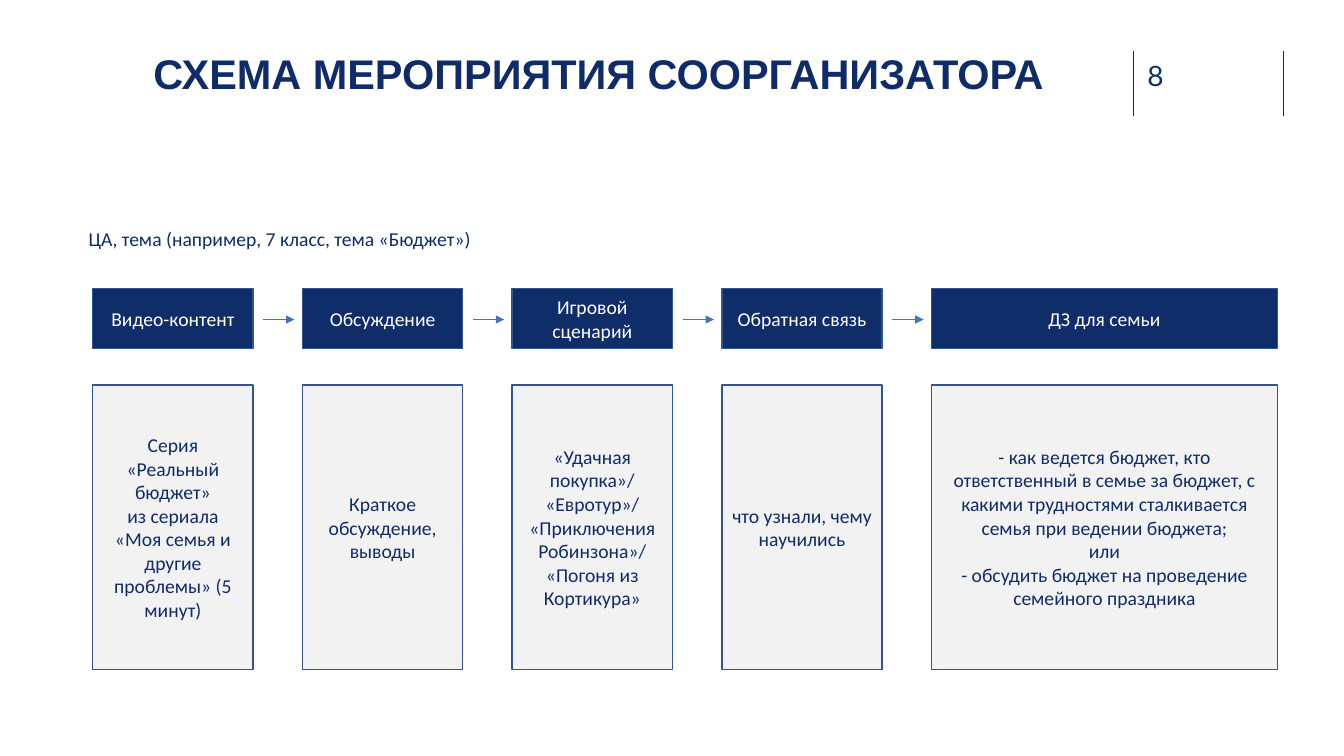
from lxml import etree
from pptx import Presentation
from pptx.dml.color import RGBColor
from pptx.enum.shapes import MSO_CONNECTOR, MSO_SHAPE
from pptx.enum.text import MSO_ANCHOR, MSO_AUTO_SIZE, PP_ALIGN
from pptx.oxml.ns import qn
from pptx.util import Emu, Pt

EMU_PER_PX = 9144

NAVY = RGBColor(0x0E, 0x2D, 0x69)
INK = RGBColor(0x0F, 0x2C, 0x68)
BORDER = RGBColor(0x32, 0x54, 0x91)
ARROW = RGBColor(0x44, 0x72, 0xC4)
PALE = RGBColor(0xF2, 0xF2, 0xF2)
WHITE = RGBColor(0xFF, 0xFF, 0xFF)

CARD_LEFT, CARD_WIDTH, LAST_CARD_WIDTH, CARD_STEP = 92, 159, 343, 208
HEADER_TOP, HEADER_HEIGHT = 286, 60
BODY_TOP, BODY_HEIGHT = 382, 282
ARROW_GAP, ARROW_LENGTH, ARROW_TOP = 10, 31, 317

STAGES = [
    ("Видео-контент",
     ["Серия «Реальный бюджет»",
      "из сериала «Моя семья и другие проблемы» (5 минут)"]),
    ("Обсуждение", ["Краткое обсуждение, выводы"]),
    ("Игровой сценарий",
     ["«Удачная покупка»/ «Евротур»/ «Приключения Робинзона»/ «Погоня из Кортикура»"]),
    ("Обратная связь", ["что узнали, чему научились"]),
    ("ДЗ для семьи",
     ["- как ведется бюджет, кто ответственный в семье за бюджет, "
      "с какими трудностями сталкивается семья при ведении бюджета;",
      "или",
      "- обсудить бюджет на проведение семейного праздника"]),
]


def px(*lengths):
    return [Emu(length * EMU_PER_PX) for length in lengths]


def write(shape, lines, size=14, font="Calibri", color=INK, bold=False,
          align=PP_ALIGN.LEFT, anchor=MSO_ANCHOR.TOP, spacing=None, inset=None):
    frame = shape.text_frame
    frame.word_wrap = True
    frame.auto_size = MSO_AUTO_SIZE.NONE
    frame.vertical_anchor = anchor
    if inset is not None:
        frame.margin_left = frame.margin_right = inset
        frame.margin_top = frame.margin_bottom = inset
    frame.text = "\n".join(lines)
    for paragraph in frame.paragraphs:
        paragraph.alignment = align
        paragraph.line_spacing = spacing
        paragraph.font.size = Pt(size)
        paragraph.font.name = font
        paragraph.font.bold = bold
        paragraph.font.color.rgb = color


def add_text(slide, box, lines, **text_format):
    write(slide.shapes.add_textbox(*px(*box)), lines, **text_format)


def add_card(slide, box, lines, fill, color):
    card = slide.shapes.add_shape(MSO_SHAPE.RECTANGLE, *px(*box))
    card.shadow.inherit = False
    card.fill.solid()
    card.fill.fore_color.rgb = fill
    card.line.color.rgb = BORDER
    card.line.width = Pt(1)
    write(card, lines, color=color, align=PP_ALIGN.CENTER, anchor=MSO_ANCHOR.MIDDLE)


def add_line(slide, start, end, color, width, arrow=False):
    line = slide.shapes.add_connector(MSO_CONNECTOR.STRAIGHT, *px(*start, *end))
    line.line.color.rgb = color
    line.line.width = Pt(width)
    if arrow:
        etree.SubElement(line.line._get_or_add_ln(), qn("a:tailEnd"), type="triangle")
    etree.SubElement(line._element.spPr, qn("a:effectLst"))


def add_heading(slide):
    title = slide.shapes.title
    title.left, title.top, title.width, title.height = px(142, 48, 968, 85)
    write(title, ["СХЕМА МЕРОПРИЯТИЯ СООРГАНИЗАТОРА"],
          size=29.6, font="Arial", bold=True, spacing=0.9)
    for x in (1124, 1273):
        add_line(slide, (x, 51), (x, 115), NAVY, 1)
    add_text(slide, (1138, 58, 73, 34), ["8"], size=20, font="Lato", color=NAVY, inset=0)


def add_stages(slide):
    last = len(STAGES) - 1
    for index, (name, details) in enumerate(STAGES):
        left = CARD_LEFT + index * CARD_STEP
        width = LAST_CARD_WIDTH if index == last else CARD_WIDTH
        add_card(slide, (left, HEADER_TOP, width, HEADER_HEIGHT), [name], NAVY, WHITE)
        add_card(slide, (left, BODY_TOP, width, BODY_HEIGHT), details, PALE, INK)
        if index < last:
            start = left + width + ARROW_GAP
            add_line(slide, (start, ARROW_TOP), (start + ARROW_LENGTH, ARROW_TOP),
                     ARROW, 0.5, arrow=True)


def main():
    presentation = Presentation()
    presentation.slide_width, presentation.slide_height = px(1333, 750)
    title_only = presentation.slide_layouts[5]
    slide = presentation.slides.add_slide(title_only)
    add_heading(slide)
    add_text(slide, (78, 220, 1020, 34), ["ЦА, тема (например, 7 класс, тема «Бюджет»)"])
    add_stages(slide)
    presentation.save("out.pptx")


if __name__ == "__main__":
    main()
